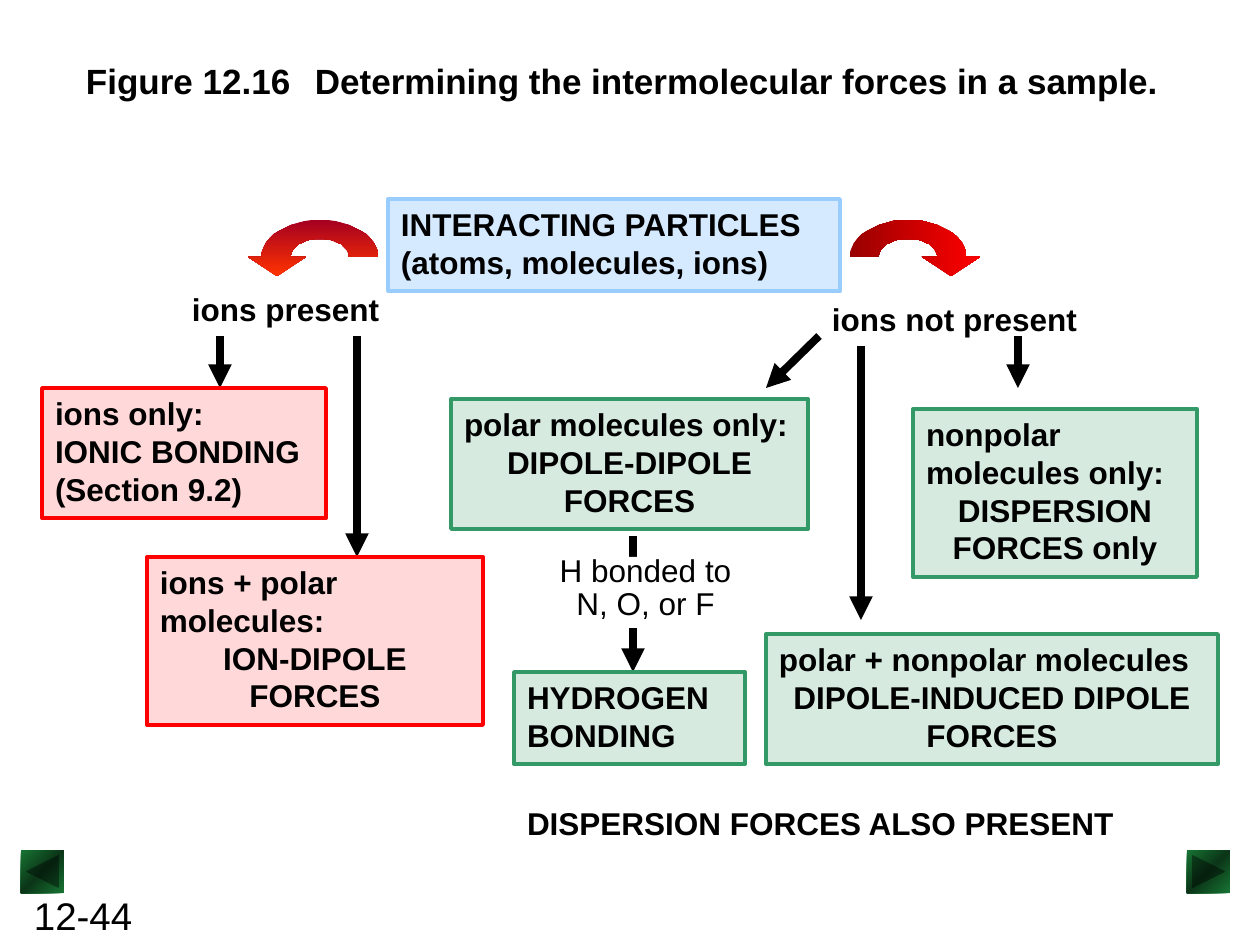
"""Build the slide on determining the intermolecular forces in a sample."""
from copy import deepcopy
from math import cos, pi, sin
from typing import NamedTuple

from pptx import Presentation
from pptx.dml.color import RGBColor
from pptx.enum.shapes import MSO_CONNECTOR, MSO_SHAPE
from pptx.enum.text import MSO_ANCHOR, PP_ALIGN
from pptx.oxml.ns import qn
from pptx.util import Emu, Pt

RECTANGLE = MSO_SHAPE.RECTANGLE
BACK, FORWARD = MSO_SHAPE.ACTION_BUTTON_BACK_OR_PREVIOUS, MSO_SHAPE.ACTION_BUTTON_FORWARD_OR_NEXT
STRAIGHT = MSO_CONNECTOR.STRAIGHT
LEFT, CENTER = PP_ALIGN.LEFT, PP_ALIGN.CENTER
TOP = MSO_ANCHOR.TOP
EMU_PER_PX = 914400 / 126
FONT = "Arial"
BLACK, RED, GREEN, BLUE = "000000", "FF0000", "339966", "99CCFF"
OPACITY = {RED: 15, GREEN: 20, BLUE: 40}


class Label(NamedTuple):
    text: str
    left: int
    top: int
    width: int
    height: int
    size: int = 18
    bold: bool = True
    inset: int = 13


class Box(NamedTuple):
    color: str
    left: int
    top: int
    width: int
    height: int
    heading: list[str]
    force: list[str]


class Arrow(NamedTuple):
    x1: int
    y1: int
    x2: int
    y2: int


class Turn(NamedTuple):
    center: int
    direction: int
    stops: list[str]
    angle: int


class Button(NamedTuple):
    kind: MSO_SHAPE
    left: int


LABELS = [
    Label("12-44", 21, 886, 136, 59, size=22, bold=False),
    Label("Figure 12.16", 73, 53, 252, 54, size=20),
    Label("Determining the intermolecular forces in a sample.", 315, 53, 882, 54, size=20, inset=0),
    Label("ions not present", 819, 294, 284, 50),
    Label("ions present", 179, 284, 231, 50),
    Label("DISPERSION FORCES ALSO PRESENT", 514, 798, 614, 50),
]
BOXES = [
    Box(BLUE, 388, 199, 452, 92, ["INTERACTING PARTICLES", "(atoms, molecules, ions)"], []),
    Box(RED, 42, 388, 284, 130, ["ions only:", "IONIC BONDING", "(Section 9.2)"], []),
    Box(RED, 147, 557, 336, 168, ["ions + polar molecules:"], ["ION-DIPOLE FORCES"]),
    Box(GREEN, 451, 399, 357, 130, ["polar molecules only:"], ["DIPOLE-DIPOLE", "FORCES"]),
    Box(GREEN, 514, 672, 231, 92, ["HYDROGEN", "BONDING"], []),
    Box(GREEN, 766, 634, 452, 130, ["polar + nonpolar molecules"], ["DIPOLE-INDUCED DIPOLE", "FORCES"]),
    Box(GREEN, 913, 409, 284, 168, ["nonpolar", "molecules only:"], ["DISPERSION", "FORCES only"]),
]
ARROWS = [
    Arrow(220, 336, 220, 388),
    Arrow(357, 336, 357, 557),
    Arrow(819, 336, 766, 388),
    Arrow(633, 536, 633, 672),
    Arrow(861, 346, 861, 620),
    Arrow(1018, 336, 1018, 388),
]
TURNS = [
    Turn(908, 1, ["990000", "FF0000"], 0),
    Turn(320, -1, ["A50021", "FF3300"], 90),
]
BUTTONS = [Button(BACK, 21), Button(FORWARD, 1187)]


def px(*lengths: int) -> list[Emu]:
    return [Emu(round(length * EMU_PER_PX)) for length in lengths]


def rgb(color: str) -> RGBColor:
    return RGBColor.from_string(color)


def write(frame, lines: list[tuple], size: int = 18, bold: bool = True, inset: int = 13) -> None:
    frame.word_wrap = True
    frame.vertical_anchor = TOP
    frame.margin_left, frame.margin_right, frame.margin_top, frame.margin_bottom = px(inset, inset, 6, 6)
    frame.text = "\n".join(text for text, _ in lines)
    for paragraph, (_, alignment) in zip(frame.paragraphs, lines):
        paragraph.alignment = alignment
        font = paragraph.font
        font.name, font.size, font.bold = FONT, Pt(size), bold
        font.color.rgb = rgb(BLACK)


def fill_gradient(shape, colors: list[str], angle: int) -> None:
    shape.shadow.inherit = False
    shape.line.fill.background()
    shape.fill.gradient()
    shape.fill.gradient_angle = (360 - angle) % 360
    stop_list = shape._element.spPr.find(".//" + qn("a:gsLst"))
    while len(stop_list) < len(colors):
        stop_list.append(deepcopy(stop_list[-1]))
    for index, (stop, color) in enumerate(zip(shape.fill.gradient_stops, colors)):
        stop.color.rgb = rgb(color)
        stop.position = index / (len(colors) - 1)


def draw_label(shapes, label: Label) -> None:
    textbox = shapes.add_textbox(*px(label.left, label.top, label.width, label.height))
    write(textbox.text_frame, [(label.text, LEFT)], label.size, label.bold, label.inset)


def draw_box(shapes, box: Box) -> None:
    rectangle = shapes.add_shape(RECTANGLE, *px(box.left, box.top, box.width, box.height))
    rectangle.shadow.inherit = False
    rectangle.fill.solid()
    rectangle.fill.fore_color.rgb = rgb(box.color)
    fill_color = rectangle._element.spPr.find(qn("a:solidFill"))[0]
    fill_color.makeelement(qn("a:alpha"), {})
    alpha = fill_color.makeelement(qn("a:alpha"), {"val": str(OPACITY[box.color] * 1000)})
    fill_color.append(alpha)
    rectangle.line.color.rgb = rgb(box.color)
    rectangle.line.width = Pt(2.25)
    lines = [(text, LEFT) for text in box.heading] + [(text, CENTER) for text in box.force]
    write(rectangle.text_frame, lines)


def draw_arrow(shapes, arrow: Arrow) -> None:
    connector = shapes.add_connector(STRAIGHT, *px(*arrow))
    connector.line.color.rgb = rgb(BLACK)
    connector.line.width = Pt(4.5)
    outline = connector.line._get_or_add_ln()
    outline.append(outline.makeelement(qn("a:tailEnd"), {"type": "triangle"}))
    properties = connector._element.spPr
    properties.append(properties.makeelement(qn("a:effectLst"), {}))


def draw_turn(shapes, turn: Turn) -> None:
    base, steps = 257, 24

    def arc(width: int, height: int) -> list[tuple]:
        angles = [pi * step / steps for step in range(steps + 1)]
        return [(turn.center - turn.direction * width * cos(a), base - height * sin(a)) for a in angles]

    head = [(turn.center + turn.direction * x, y) for x, y in [(72, base), (43, 276), (14, base)]]
    outline = arc(58, 37) + head + arc(29, 18)[::-1]
    builder = shapes.build_freeform(*outline[0], scale=EMU_PER_PX)
    builder.add_line_segments(outline[1:], close=True)
    fill_gradient(builder.convert_to_shape(), turn.stops, turn.angle)


def draw_button(shapes, button: Button) -> None:
    shape = shapes.add_shape(button.kind, *px(button.left, 850, 43, 43))
    fill_gradient(shape, ["187534", "0B3618", "187534"], 45)


def draw_condition(shapes) -> None:
    condition = shapes.add_shape(RECTANGLE, *px(535, 557, 221, 71))
    condition.shadow.inherit = False
    condition.fill.solid()
    condition.fill.fore_color.rgb = rgb("FFFFFF")
    condition.line.fill.background()
    write(condition.text_frame, [("H bonded to", CENTER), ("N, O, or F", CENTER)], bold=False)
    first, second = condition.text_frame.paragraphs
    first.line_spacing = second.line_spacing = 0.65
    second.space_before = Pt(4.5)


def main() -> None:
    presentation = Presentation()
    presentation.slide_width, presentation.slide_height = px(1260, 945)
    shapes = presentation.slides.add_slide(presentation.slide_layouts[6]).shapes
    for draw, parts in [(draw_button, BUTTONS), (draw_label, LABELS), (draw_turn, TURNS),
                        (draw_arrow, ARROWS), (draw_box, BOXES)]:
        for part in parts:
            draw(shapes, part)
    draw_condition(shapes)
    presentation.save("out.pptx")


if __name__ == "__main__":
    main()
